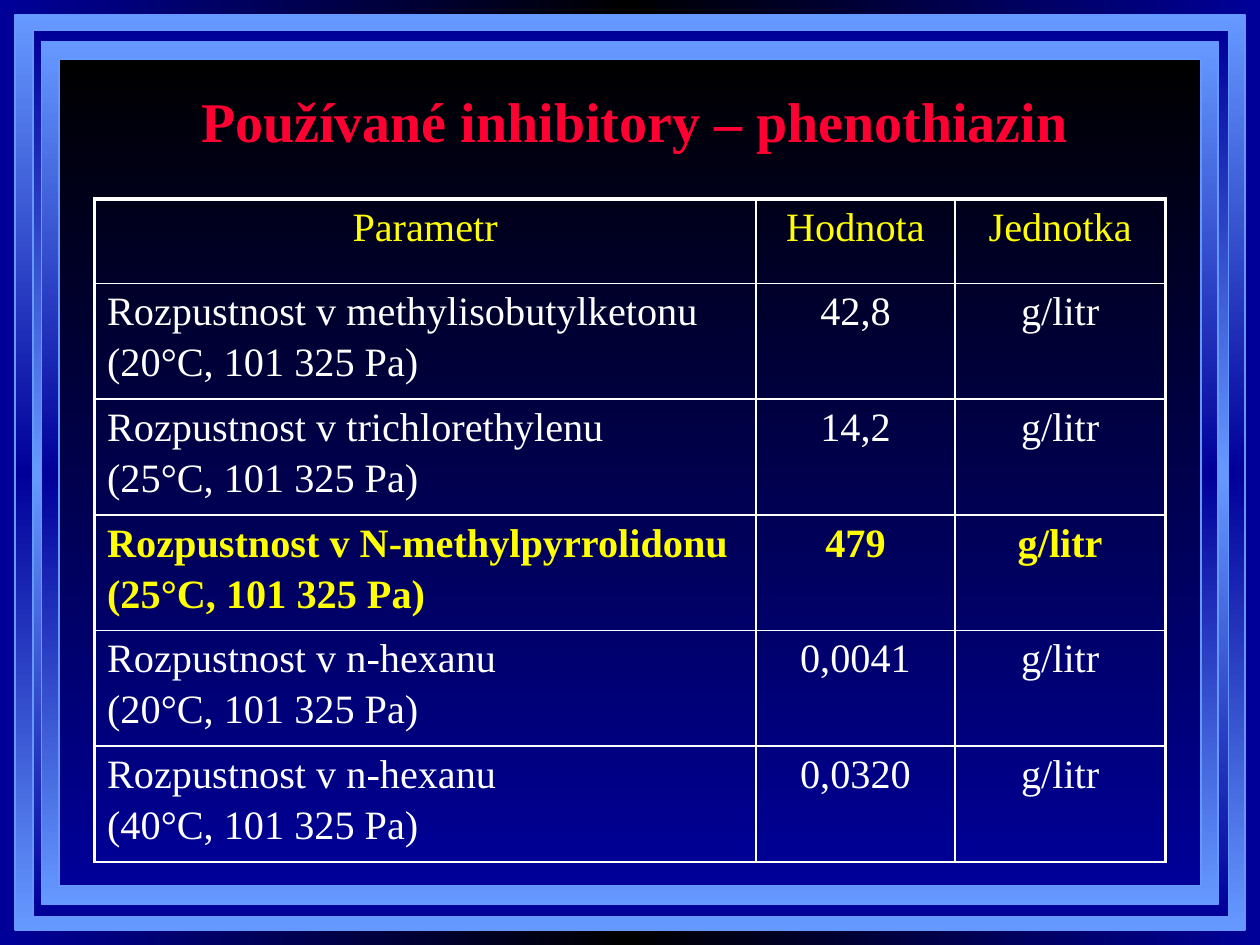
from typing import NamedTuple

from lxml.etree import SubElement
from pptx import Presentation
from pptx.dml.color import RGBColor
from pptx.enum.shapes import MSO_SHAPE
from pptx.enum.text import MSO_ANCHOR, PP_ALIGN
from pptx.oxml.ns import qn
from pptx.util import Inches, Pt

FONT = "Times New Roman"
NAVY, SKY, BLACK = "000099", "6699FF", "000000"
WHITE, YELLOW, RED = "FFFFFF", "FFFF00", "FF0033"


class Frame(NamedTuple):
    left: float
    top: float
    width: float
    height: float
    gradient: tuple[str, ...]


class Solubility(NamedTuple):
    solvent: str
    temperature: int
    value: str
    highlighted: bool = False


FRAMES = [
    Frame(0.12, 0.12, 9.76, 7.26, (SKY, NAVY, SKY)),
    Frame(0.26, 0.24, 9.49, 7.04, (NAVY, SKY, NAVY)),
    Frame(0.33, 0.33, 9.34, 6.85, (SKY, NAVY, SKY)),
    Frame(0.47, 0.47, 9.06, 6.56, (BLACK, NAVY)),
]
HEADINGS = ["Parametr", "Hodnota", "Jednotka"]
SOLUBILITIES = [
    Solubility("methylisobutylketonu", 20, "42,8"),
    Solubility("trichlorethylenu", 25, "14,2"),
    Solubility("N-methylpyrrolidonu", 25, "479", highlighted=True),
    Solubility("n-hexanu", 20, "0,0041"),
    Solubility("n-hexanu", 40, "0,0320"),
]
COLUMN_WIDTHS = [5.25, 1.58, 1.67]
HEADING_HEIGHT, ROW_HEIGHT = 0.67, 0.87
THIN, THICK = 1, 2.25


def rgb(color: str) -> RGBColor:
    return RGBColor.from_string(color)


def set_gradient(fill, element, colors: tuple[str, ...], angle: int) -> None:
    """Spread the colours evenly along a linear gradient."""
    fill.gradient()
    fill.gradient_angle = angle
    stops = next(element.iter(qn("a:gsLst")))
    for stop in list(stops):
        stops.remove(stop)
    for index, color in enumerate(colors):
        position = 100000 * index // (len(colors) - 1)
        stop = SubElement(stops, qn("a:gs"), pos=str(position))
        SubElement(stop, qn("a:srgbClr"), val=color)


def draw_frame(slide, frame: Frame) -> None:
    box = slide.shapes.add_shape(MSO_SHAPE.RECTANGLE, *map(Inches, frame[:4]))
    box.shadow.inherit = False
    set_gradient(box.fill, box.element, frame.gradient, 270)
    box.line.color.rgb = rgb(SKY)
    box.line.width = Pt(1)


def style_paragraph(paragraph, size: float, color: str, bold: bool,
                    align: PP_ALIGN) -> None:
    paragraph.alignment = align
    font = paragraph.font
    font.name, font.size, font.bold = FONT, Pt(size), bold
    font.color.rgb = rgb(color)


def set_borders(cell, widths: dict[str, float]) -> None:
    properties = cell._tc.get_or_add_tcPr()
    for index, (side, width) in enumerate(widths.items()):
        line = SubElement(properties, qn(f"a:ln{side}"), w=str(Pt(width)))
        fill = SubElement(line, qn("a:solidFill"))
        SubElement(fill, qn("a:srgbClr"), val=WHITE)
        properties.insert(index, line)


def fill_cell(cell, lines: list[str], color: str, bold: bool,
              align: PP_ALIGN) -> None:
    cell.fill.background()
    cell.text_frame.text = "\n".join(lines)
    for index, paragraph in enumerate(cell.text_frame.paragraphs):
        style_paragraph(paragraph, 23, color, bold, align)
        if index:
            paragraph.space_before = Pt(3.7)


def draw_title(slide, title: str) -> None:
    box = slide.shapes.add_textbox(
        Inches(0.58), Inches(0.58), Inches(8.92), Inches(0.75))
    text_frame = box.text_frame
    text_frame.word_wrap = True
    text_frame.vertical_anchor = MSO_ANCHOR.MIDDLE
    text_frame.text = title
    style_paragraph(text_frame.paragraphs[0], 32, RED, True, PP_ALIGN.CENTER)


def draw_solubility_table(slide) -> None:
    heights = [HEADING_HEIGHT] + [ROW_HEIGHT] * len(SOLUBILITIES)
    table = slide.shapes.add_table(
        len(heights), len(HEADINGS), Inches(0.75), Inches(1.58),
        Inches(sum(COLUMN_WIDTHS)), Inches(sum(heights))).table
    table.first_row = table.horz_banding = False
    for column, width in zip(table.columns, COLUMN_WIDTHS):
        column.width = Inches(width)
    for row, height in zip(table.rows, heights):
        row.height = Inches(height)

    # Heading row
    for column, heading in enumerate(HEADINGS):
        fill_cell(table.cell(0, column), [heading], YELLOW, False,
                  PP_ALIGN.CENTER)

    # Solubility rows
    for row, entry in enumerate(SOLUBILITIES, start=1):
        parameter = [f"Rozpustnost v {entry.solvent}",
                     f"({entry.temperature}°C, 101 325 Pa)"]
        color = YELLOW if entry.highlighted else WHITE
        for column, lines in enumerate([parameter, [entry.value], ["g/litr"]]):
            align = PP_ALIGN.CENTER if column else PP_ALIGN.LEFT
            fill_cell(table.cell(row, column), lines, color,
                      entry.highlighted, align)

    # Thick outline on the left, top and right; thin lines elsewhere
    last_column = len(HEADINGS) - 1
    for row in range(len(heights)):
        for column in range(len(HEADINGS)):
            set_borders(table.cell(row, column), {
                "L": THICK if column == 0 else THIN,
                "R": THICK if column == last_column else THIN,
                "T": THICK if row == 0 else THIN,
                "B": THIN,
            })


def main() -> None:
    presentation = Presentation()
    presentation.slide_width = Inches(10)
    presentation.slide_height = Inches(7.5)
    slide = presentation.slides.add_slide(presentation.slide_layouts[6])

    # Background and nested frames
    set_gradient(slide.background.fill, slide.element, (NAVY, BLACK, NAVY), 0)
    for frame in FRAMES:
        draw_frame(slide, frame)

    # Content
    draw_title(slide, "Používané inhibitory – phenothiazin")
    draw_solubility_table(slide)
    presentation.save("out.pptx")


if __name__ == "__main__":
    main()
